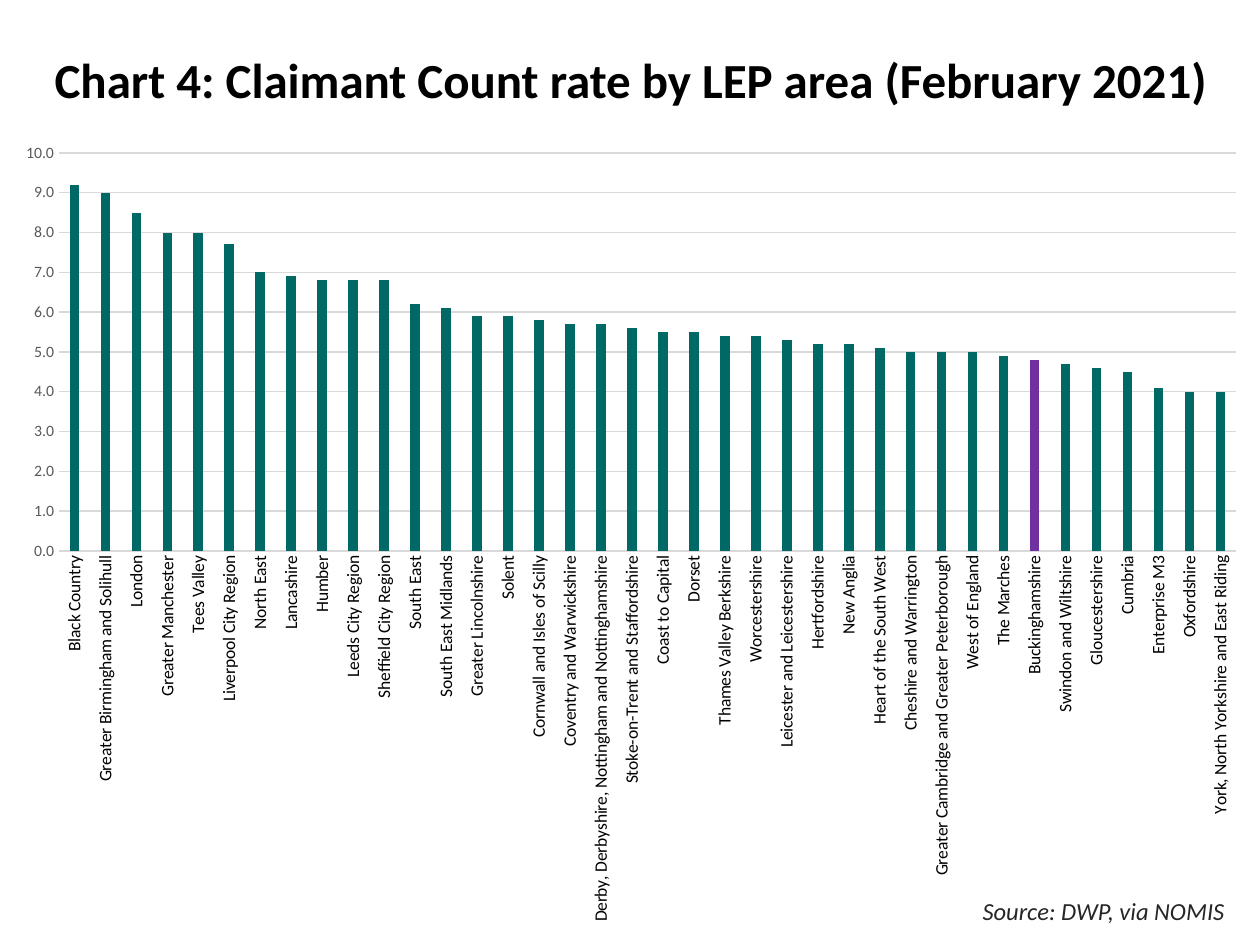
from dataclasses import dataclass
from typing import NamedTuple

from lxml.etree import SubElement
from pptx import Presentation
from pptx.chart.data import CategoryChartData
from pptx.dml.color import RGBColor
from pptx.enum.chart import XL_CHART_TYPE as ChartType, XL_TICK_MARK as TickMark
from pptx.enum.text import MSO_ANCHOR as Anchor, MSO_AUTO_SIZE as AutoSize, PP_ALIGN as Align
from pptx.oxml.ns import qn
from pptx.util import Emu, Inches, Pt

PX_PER_INCH = 126


@dataclass(frozen=True)
class Theme:
    font: str = "Calibri"
    black: str = "000000"
    source_grey: str = "262626"
    scale_grey: str = "595959"
    grid_grey: str = "D9D9D9"
    white: str = "FFFFFF"
    bar: str = "006965"
    highlight: str = "7030A0"
    title_size: int = 28
    source_size: int = 14
    area_size: int = 10
    scale_size: int = 9
    grid_width: float = 0.75


class Box(NamedTuple):
    left: int
    top: int
    width: int
    height: int


class Area(NamedTuple):
    name: str
    rate: float


THEME = Theme()
HIGHLIGHTED = "Buckinghamshire"
TITLE_BOX = Box(42, 34, 1179, 97)
SOURCE_BOX = Box(937, 890, 300, 43)
CHART_BOX = Box(1, 127, 1259, 811)
PLOT_BOX = Box(59, 153, 1177, 398)

AREAS = [
    Area("Black Country", 9.2),
    Area("Greater Birmingham and Solihull", 9.0),
    Area("London", 8.5),
    Area("Greater Manchester", 8.0),
    Area("Tees Valley", 8.0),
    Area("Liverpool City Region", 7.7),
    Area("North East", 7.0),
    Area("Lancashire", 6.9),
    Area("Humber", 6.8),
    Area("Leeds City Region", 6.8),
    Area("Sheffield City Region", 6.8),
    Area("South East", 6.2),
    Area("South East Midlands", 6.1),
    Area("Greater Lincolnshire", 5.9),
    Area("Solent", 5.9),
    Area("Cornwall and Isles of Scilly", 5.8),
    Area("Coventry and Warwickshire", 5.7),
    Area("Derby, Derbyshire, Nottingham and Nottinghamshire", 5.7),
    Area("Stoke-on-Trent and Staffordshire", 5.6),
    Area("Coast to Capital", 5.5),
    Area("Dorset", 5.5),
    Area("Thames Valley Berkshire", 5.4),
    Area("Worcestershire", 5.4),
    Area("Leicester and Leicestershire", 5.3),
    Area("Hertfordshire", 5.2),
    Area("New Anglia", 5.2),
    Area("Heart of the South West", 5.1),
    Area("Cheshire and Warrington", 5.0),
    Area("Greater Cambridge and Greater Peterborough", 5.0),
    Area("West of England", 5.0),
    Area("The Marches", 4.9),
    Area(HIGHLIGHTED, 4.8),
    Area("Swindon and Wiltshire", 4.7),
    Area("Gloucestershire", 4.6),
    Area("Cumbria", 4.5),
    Area("Enterprise M3", 4.1),
    Area("Oxfordshire", 4.0),
    Area("York, North Yorkshire and East Riding", 4.0),
]


def px(length: int) -> Emu:
    return Emu(round(length * Inches(1) / PX_PER_INCH))


def emu_box(box: Box) -> tuple[Emu, ...]:
    return tuple(px(length) for length in box)


def style_font(font, size: int, color: str, bold: bool = False, italic: bool = False) -> None:
    font.name, font.size = THEME.font, Pt(size)
    font.bold, font.italic = bold, italic
    font.color.rgb = RGBColor.from_string(color)


def paint(fill, color: str) -> None:
    fill.solid()
    fill.fore_color.rgb = RGBColor.from_string(color)


def style_line(line) -> None:
    line.color.rgb = RGBColor.from_string(THEME.grid_grey)
    line.width = Pt(THEME.grid_width)


def place_plot(chart) -> None:
    """Fix the inner plot area as fractions of the chart."""
    plot_area = chart._chartSpace.chart.plotArea
    for old_layout in plot_area.findall(qn("c:layout")):
        plot_area.remove(old_layout)
    layout = SubElement(plot_area, qn("c:layout"))
    plot_area.insert(0, layout)
    manual = SubElement(layout, qn("c:manualLayout"))
    settings = {
        "layoutTarget": "inner",
        "xMode": "edge",
        "yMode": "edge",
        "x": (PLOT_BOX.left - CHART_BOX.left) / CHART_BOX.width,
        "y": (PLOT_BOX.top - CHART_BOX.top) / CHART_BOX.height,
        "w": PLOT_BOX.width / CHART_BOX.width,
        "h": PLOT_BOX.height / CHART_BOX.height,
    }
    for tag, value in settings.items():
        SubElement(manual, qn(f"c:{tag}")).set("val", str(value))


def add_title(slide) -> None:
    title = slide.shapes.title
    title.left, title.top, title.width, title.height = emu_box(TITLE_BOX)
    paint(title.fill, THEME.white)
    frame = title.text_frame
    frame.text = "Chart 4: Claimant Count rate by LEP area (February 2021)"
    frame.auto_size = AutoSize.NONE
    frame.vertical_anchor = Anchor.MIDDLE
    frame.margin_right = 0
    heading = frame.paragraphs[0]
    heading.alignment, heading.line_spacing = Align.LEFT, 0.9
    style_font(heading.runs[0].font, THEME.title_size, THEME.black, bold=True)


def add_rate_chart(slide) -> None:
    rates = CategoryChartData(number_format="#,##0.0")
    rates.categories = [area.name for area in AREAS]
    rates.add_series("Series 1", [area.rate for area in AREAS])
    chart = slide.shapes.add_chart(
        ChartType.COLUMN_CLUSTERED, *emu_box(CHART_BOX), rates).chart
    chart.has_legend = chart.has_title = False
    style_font(chart.font, THEME.area_size, THEME.black)
    place_plot(chart)

    # Bars, with one area picked out
    bars = chart.plots[0]
    bars.gap_width, bars.overlap, bars.vary_by_categories = 219, -27, False
    series = bars.series[0]
    paint(series.format.fill, THEME.bar)
    for index, area in enumerate(AREAS):
        if area.name == HIGHLIGHTED:
            paint(series.points[index].format.fill, THEME.highlight)

    # Area axis with upright names
    area_axis, rate_axis = chart.category_axis, chart.value_axis
    for axis in (area_axis, rate_axis):
        axis.major_tick_mark = axis.minor_tick_mark = TickMark.NONE
    style_line(area_axis.format.line)
    style_font(area_axis.tick_labels.font, THEME.area_size, THEME.black)
    label_body = area_axis._element.find(f"{qn('c:txPr')}/{qn('a:bodyPr')}")
    label_body.set("rot", "-5400000")
    label_body.set("vert", "horz")

    # Rate axis and gridlines
    rate_axis.minimum_scale, rate_axis.maximum_scale, rate_axis.major_unit = 0, 10, 1
    rate_axis.format.line.fill.background()
    style_line(rate_axis.major_gridlines.format.line)
    rate_labels = rate_axis.tick_labels
    rate_labels.number_format, rate_labels.number_format_is_linked = "#,##0.0", False
    style_font(rate_labels.font, THEME.scale_size, THEME.scale_grey)


def add_source(slide) -> None:
    frame = slide.shapes.add_textbox(*emu_box(SOURCE_BOX)).text_frame
    frame.word_wrap = True
    frame.text = "Source: DWP, via NOMIS"
    credit = frame.paragraphs[0]
    credit.alignment = Align.RIGHT
    style_font(credit.runs[0].font, THEME.source_size, THEME.source_grey, italic=True)


def main() -> None:
    deck = Presentation()
    deck.slide_width, deck.slide_height = px(1260), px(945)
    slide = deck.slides.add_slide(deck.slide_layouts[5])
    add_title(slide)
    add_rate_chart(slide)
    add_source(slide)
    deck.save("out.pptx")


if __name__ == "__main__":
    main()
